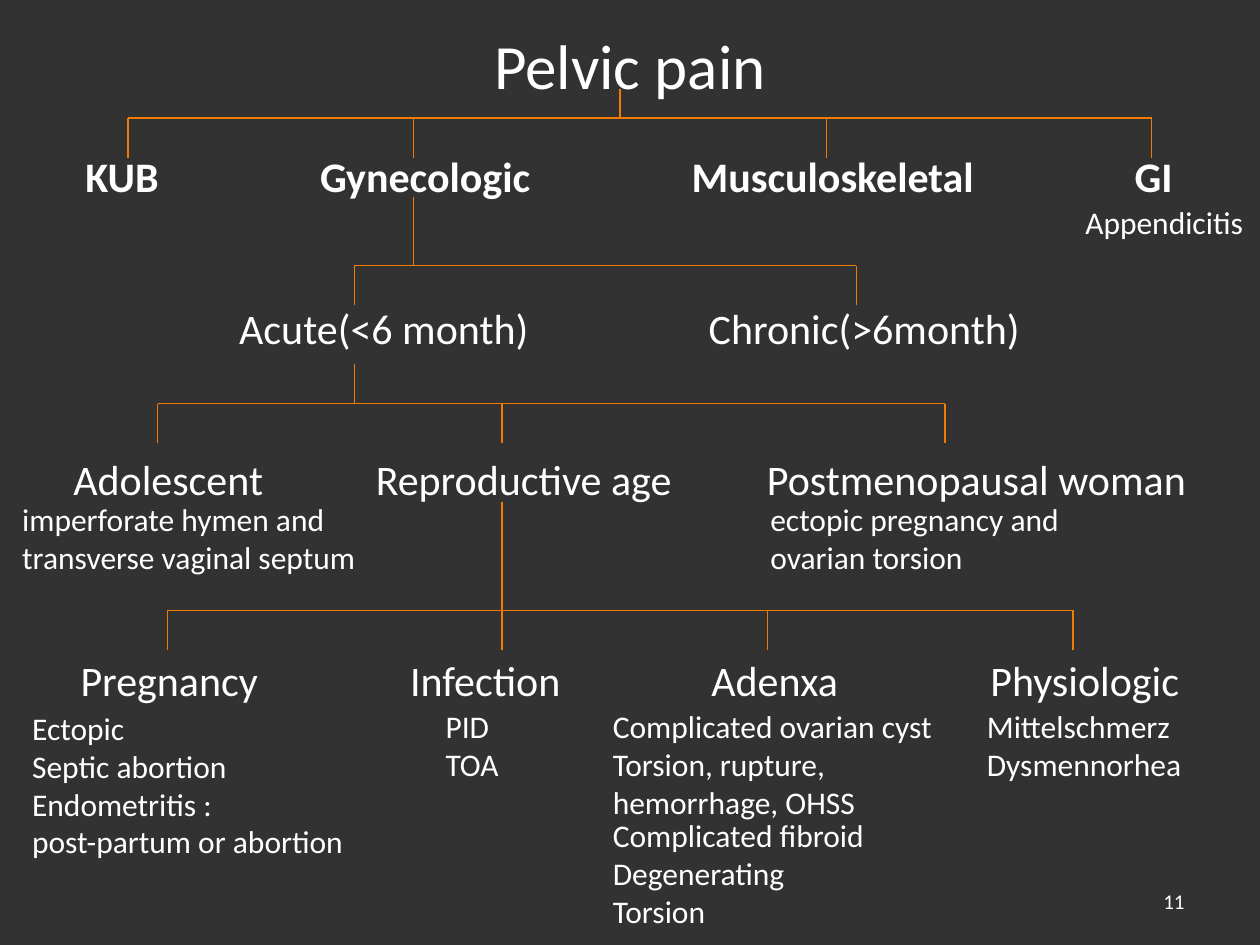
from collections import namedtuple
from dataclasses import dataclass

from lxml import etree
from pptx import Presentation
from pptx import util as u
from pptx.dml.color import RGBColor
from pptx.enum import shapes, text
from pptx.oxml.ns import qn


@dataclass(frozen=True)
class Theme:
    font: str = "Calibri"
    background: RGBColor = RGBColor(0x32, 0x32, 0x32)
    ink: RGBColor = RGBColor(0xFF, 0xFF, 0xFF)
    branch: RGBColor = RGBColor(0xF0, 0x7C, 0x03)
    branch_width: float = 0.75
    title: int = 36
    heading: int = 24
    note: int = 18
    number: int = 12


THEME = Theme()
SLIDE_WIDTH, SLIDE_HEIGHT = u.Inches(10), u.Inches(7.5)
COLUMNS, ROWS = 128, 96
CELL = SLIDE_WIDTH / COLUMNS  # square grid cell
DROP = 4  # rows from a bar down to its headings

Box = namedtuple("Box", "left top width height")
# Heading: centre column, and the column where its branch comes down
Heading = namedtuple("Heading", "label centre drop")
Note = namedtuple("Note", "left top width content")
# Rows in a tier are counted from the top of its box
Tier = namedtuple("Tier", "box stem bar heading_row bold headings notes")

TIERS = [
    Tier(Box(0, 9, 128, 11), 63, 3, 8.9, True,
         [Heading("KUB", 12.4, 13), Heading("Gynecologic", 43.2, 42),
          Heading("Musculoskeletal", 84.6, 84), Heading("GI", 117.2, 117)],
         [Note(109, 11, 19, "Appendicitis")]),
    Tier(Box(0, 20, 128, 17), 42, 7, 13.3, False,
         [Heading("Acute(<6 month)", 39, 36),
          Heading("Chronic(>6month)", 87.8, 87)],
         []),
    Tier(Box(0, 37, 128, 14), 36, 4, 11.6, False,
         [Heading("Adolescent", 17.1, 16), Heading("Reproductive age", 53.2, 51),
          Heading("Postmenopausal woman", 99.2, 96)],
         [Note(1, 13.2, 39, "imperforate hymen and\ntransverse vaginal septum"),
          Note(77, 13.2, 41, "ectopic pregnancy and\novarian torsion")]),
    Tier(Box(0, 51, 128, 45), 51, 11, 18.1, False,
         [Heading("Pregnancy", 17.2, 17), Heading("Infection", 49.3, 51),
          Heading("Adenxa", 78.7, 78), Heading("Physiologic", 110.2, 109)],
         [Note(2, 20.4, 35, "Ectopic\nSeptic abortion\nEndometritis :\n"
                            "post-partum or abortion"),
          Note(44, 20.2, 11, "PID\nTOA"),
          Note(61, 20.2, 36, "Complicated ovarian cyst\n"
                             "Torsion, rupture, hemorrhage, OHSS"),
          Note(61, 31.3, 43, "Complicated fibroid\nDegenerating\nTorsion"),
          Note(99, 20.2, 27, "Mittelschmerz\nDysmennorhea")]),
]


def cells(count):
    return u.Emu(round(count * CELL))


def add_text(slide, box, content, size, bold=False,
             align=text.PP_ALIGN.LEFT, anchor=text.MSO_ANCHOR.TOP):
    shape = slide.shapes.add_textbox(*(cells(length) for length in box))
    frame = shape.text_frame
    frame.word_wrap = True
    frame.vertical_anchor = anchor
    frame.text = content
    for paragraph in frame.paragraphs:
        paragraph.alignment = align
        for run in paragraph.runs:
            run.font.name = THEME.font
            run.font.size = u.Pt(size)
            run.font.bold = bold
            run.font.color.rgb = THEME.ink


def add_centred(slide, column, row, content, size, bold=False):
    width, height = 60, 8
    box = Box(column - width / 2, row - height / 2, width, height)
    add_text(slide, box, content, size, bold,
             text.PP_ALIGN.CENTER, text.MSO_ANCHOR.MIDDLE)


def add_branch(slide, start, end):
    connector = slide.shapes.add_connector(
        shapes.MSO_CONNECTOR.STRAIGHT, *(cells(length) for length in start + end))
    connector.line.color.rgb = THEME.branch
    connector.line.width = u.Pt(THEME.branch_width)
    etree.SubElement(connector._element.spPr, qn("a:effectLst"))


def draw_title(slide, box):
    add_centred(slide, box.left + box.width / 2, box.top + box.height / 2,
                "Pelvic pain", THEME.title)


def draw_tier(slide, tier):
    left, top = tier.box.left, tier.box.top
    bar = top + tier.bar
    drops = [left + heading.drop for heading in tier.headings]

    # Stem, bar and drops
    add_branch(slide, (left + tier.stem, top), (left + tier.stem, bar))
    add_branch(slide, (drops[0], bar), (drops[-1], bar))
    for column in drops:
        add_branch(slide, (column, bar), (column, bar + DROP))

    # Headings
    for heading in tier.headings:
        add_centred(slide, left + heading.centre, top + tier.heading_row,
                    heading.label, THEME.heading, tier.bold)

    # Notes under the headings
    for note in tier.notes:
        height = 5 + 3.9 * note.content.count("\n")
        add_text(slide, Box(left + note.left, top + note.top, note.width, height),
                 note.content, THEME.note)


def draw_number(slide, box):
    add_text(slide, box, "11", THEME.number,
             align=text.PP_ALIGN.RIGHT, anchor=text.MSO_ANCHOR.MIDDLE)


def main():
    presentation = Presentation()
    presentation.slide_width, presentation.slide_height = SLIDE_WIDTH, SLIDE_HEIGHT
    slide = presentation.slides.add_slide(presentation.slide_layouts[6])
    slide.background.fill.solid()
    slide.background.fill.fore_color.rgb = THEME.background

    draw_title(slide, Box(0, 0, COLUMNS, 13))
    for tier in TIERS:
        draw_tier(slide, tier)
    draw_number(slide, Box(91.8, 89, 29.8, 5))
    presentation.save("out.pptx")


if __name__ == "__main__":
    main()
